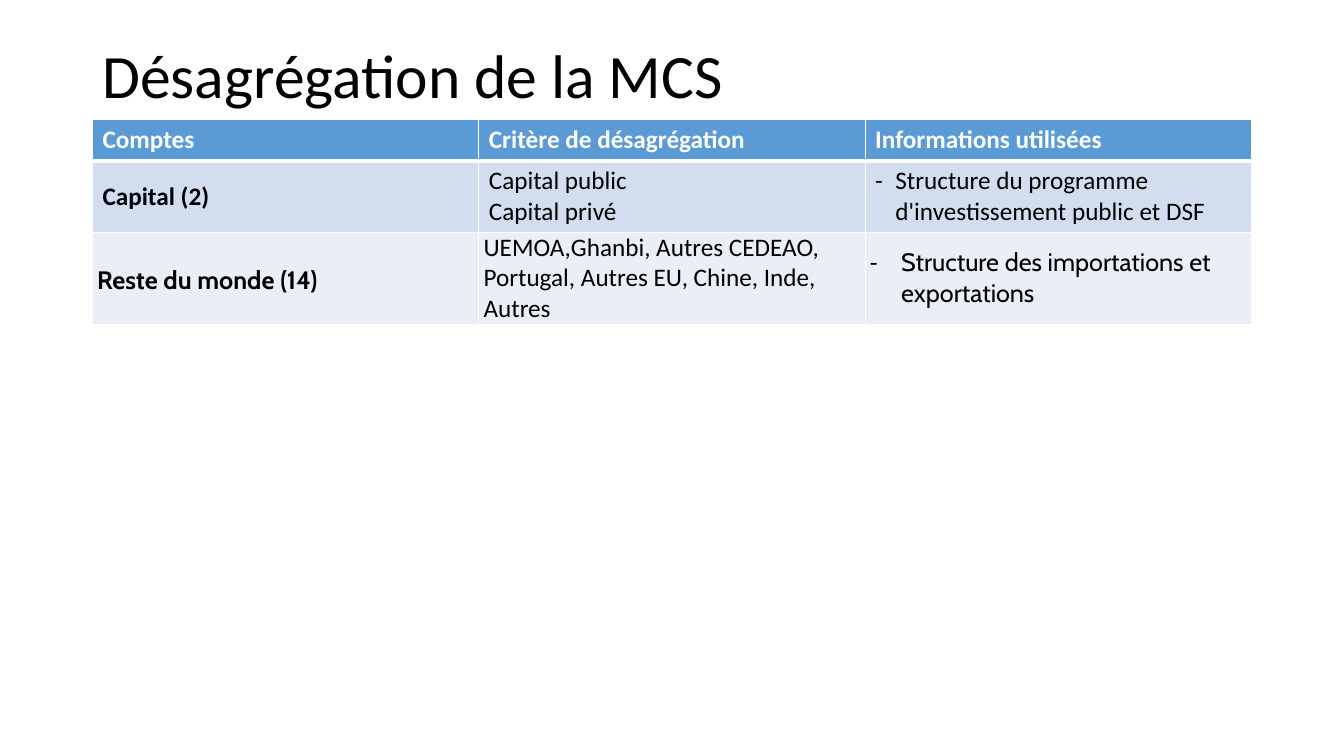
from pptx import Presentation
from pptx.dml.color import RGBColor as Rgb
from pptx.enum.text import MSO_ANCHOR as Anchor
from pptx.oxml.ns import qn
from pptx.util import Cm, Pt
from lxml.etree import SubElement as Sub

# Content: one row of cells per line, each cell a list of paragraphs
TITLE = "Désagrégation de la MCS"
ROWS = [
    [["Comptes"], ["Critère de désagrégation"], ["Informations utilisées"]],
    [["Capital (2)"], ["Capital public", "Capital privé"],
     ["Structure du programme d'investissement public et DSF"]],
    [["Reste du monde (14)"],
     ["UEMOA,Ghanbi, Autres CEDEAO, Portugal, Autres EU, Chine, Inde, Autres"],
     ["Structure des importations et exportations"]],
]

THEME = {
    "font": "Calibri", "alt": "Cabin", "title": 44, "body": 18,
    "ink": "000000", "white": "FFFFFF",
    "fills": ["5B9BD5", "D2DEEF", "EAEFF7"],
}

# Layout in centimetres
LEFT, WIDTH = 2.33, 29.21
TOP, HIGH = 3.02, [1.03, 1.8, 2.32]
DASH = {1: 0.51, 2: 0.79}  # hanging indent by row


def style(par, size, color, font, bold=False):
    for run in par.runs:
        run.font.size = Pt(size)
        run.font.name = font
        run.font.bold = bold
        run.font.color.rgb = Rgb.from_string(color)


def bullet(par, hang):
    props = par._p.get_or_add_pPr()
    props.set("marL", str(Cm(hang)))
    props.set("indent", str(-Cm(hang)))
    Sub(props, qn("a:buFont"), typeface=THEME["font"])
    Sub(props, qn("a:buChar"), char="-")


def border(cell, row):
    props = cell._tc.get_or_add_tcPr()
    wide = {0: "lnB", 1: "lnT"}.get(row)  # thick rule under the header
    for side in ("lnL", "lnR", "lnT", "lnB"):
        line = Sub(props, qn("a:" + side), w=str(Pt(3 if side == wide else 1)))
        fill = Sub(line, qn("a:solidFill"))
        Sub(fill, qn("a:srgbClr"), val=THEME["white"])


def draw(cell, row, col, lines):
    border(cell, row)
    cell.fill.solid()
    cell.fill.fore_color.rgb = Rgb.from_string(THEME["fills"][row])
    cell.vertical_anchor = Anchor.MIDDLE if row else Anchor.TOP
    if row == 2:
        cell.margin_left = cell.margin_right = Cm(0.12)
        cell.margin_top = cell.margin_bottom = 0
    cell.text_frame.text = "\n".join(lines)
    font = THEME["alt"] if row == 2 and col != 1 else THEME["font"]
    color = THEME["ink"] if row else THEME["white"]
    for par in cell.text_frame.paragraphs:
        style(par, THEME["body"], color, font, row == 0 or col == 0)
        if row == 2 and col == 0:
            par.line_spacing = 1.15
        if row and col == 2:
            bullet(par, DASH[row])


def main():
    deck = Presentation()
    deck.slide_width, deck.slide_height = Cm(33.87), Cm(19.05)
    slide = deck.slides.add_slide(deck.slide_layouts[6])

    # Title
    box = slide.shapes.add_textbox(Cm(LEFT), Cm(1.01), Cm(WIDTH), Cm(3.68))
    frame = box.text_frame
    frame.word_wrap = True
    frame.vertical_anchor = Anchor.TOP
    frame.text = TITLE
    head = frame.paragraphs[0]
    head.line_spacing = 0.9
    style(head, THEME["title"], THEME["ink"], THEME["font"])

    # Table
    table = slide.shapes.add_table(
        len(ROWS), len(ROWS[0]), Cm(LEFT), Cm(TOP), Cm(WIDTH), Cm(sum(HIGH))).table
    for row, cells in enumerate(ROWS):
        table.rows[row].height = Cm(HIGH[row])
        for col, lines in enumerate(cells):
            draw(table.cell(row, col), row, col, lines)

    deck.save("out.pptx")


if __name__ == "__main__":
    main()
